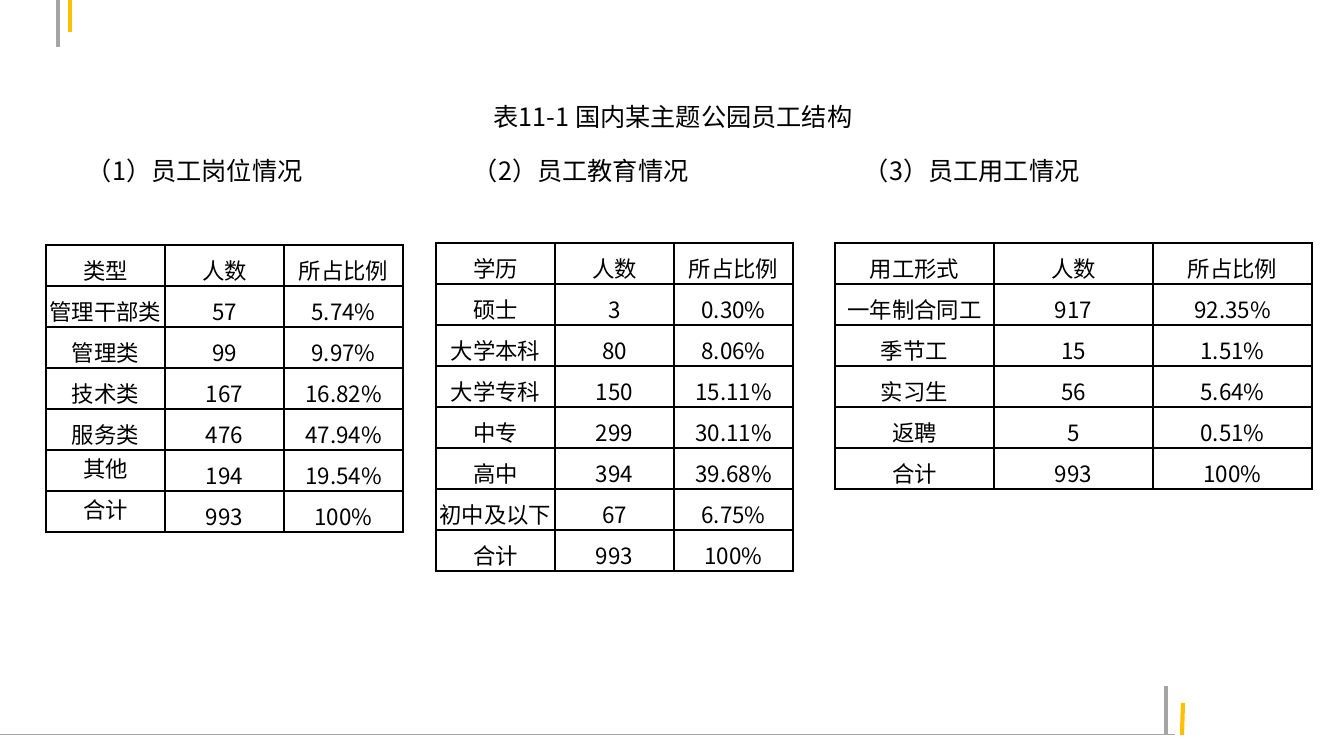
from lxml import etree
from pptx import Presentation
from pptx.dml.color import RGBColor
from pptx.enum.shapes import MSO_CONNECTOR
from pptx.enum.text import MSO_ANCHOR, PP_ALIGN
from pptx.oxml.ns import qn
from pptx.util import Pt

STRAIGHT = MSO_CONNECTOR.STRAIGHT
TOP, MIDDLE, BOTTOM = MSO_ANCHOR.TOP, MSO_ANCHOR.MIDDLE, MSO_ANCHOR.BOTTOM
LEFT, CENTER = PP_ALIGN.LEFT, PP_ALIGN.CENTER
GRAY, GOLD, BLACK = "A5A5A5", "FFC000", "000000"


def px(n):
    return round(n * 914400 / 100.8)


def color(value):
    return RGBColor.from_string(value)


class Deck:
    """Draws styled elements on the current slide, with lengths in px."""

    font = "Noto Sans CJK SC"

    def __init__(self, width, height):
        self.prs = Presentation()
        self.prs.slide_width, self.prs.slide_height = px(width), px(height)
        self.s = self.prs.slides.add_slide(self.prs.slide_layouts[6])

    def line(self, x1, y1, x2, y2, stroke, weight):
        cx = self.s.shapes.add_connector(STRAIGHT, px(x1), px(y1), px(x2), px(y2))
        cx.line.color.rgb = color(stroke)
        cx.line.width = Pt(weight)
        etree.SubElement(cx._element.spPr, qn("a:effectLst"))

    def paragraph(self, p, text, size, align=CENTER):
        p.text = text
        p.alignment = align
        p.font.size = Pt(size)
        p.font.name = self.font
        p.font.color.rgb = color(BLACK)
        rpr = p._p.get_or_add_pPr().find(qn("a:defRPr"))
        etree.SubElement(rpr, qn("a:ea"), typeface=self.font)

    def tabs(self, p, stops):
        tab_list = etree.Element(qn("a:tabLst"))
        for stop in stops:
            etree.SubElement(tab_list, qn("a:tab"), pos=str(px(stop)), algn="l")
        p._p.get_or_add_pPr().find(qn("a:defRPr")).addprevious(tab_list)

    def headings(self, x, y, w, h, title, captions, stops):
        tf = self.s.shapes.add_textbox(px(x), px(y), px(w), px(h)).text_frame
        tf.word_wrap = True
        tf.vertical_anchor = TOP
        self.paragraph(tf.paragraphs[0], title, 18)
        p = tf.add_paragraph()
        self.paragraph(p, "".join("\t" + caption for caption in captions), 18, LEFT)
        p.space_before = Pt(17.5)
        self.tabs(p, stops)

    def borders(self, cell):
        tc_pr = cell._tc.get_or_add_tcPr()
        for side in ("lnL", "lnR", "lnT", "lnB"):
            ln = etree.SubElement(tc_pr, qn("a:" + side), w=str(Pt(1)))
            fill = etree.SubElement(ln, qn("a:solidFill"))
            etree.SubElement(fill, qn("a:srgbClr"), val=BLACK)

    def table(self, x, y, col_w, row_h, rows, inset=0, fixed_cols=(), middle=()):
        n_rows, n_cols = len(rows), len(rows[0])
        tbl = self.s.shapes.add_table(
            n_rows, n_cols, px(x), px(y), px(col_w * n_cols), px(row_h * n_rows)
        ).table
        tbl.first_row = tbl.horz_banding = False
        for column in tbl.columns:
            column.width = px(col_w)
        for i, values in enumerate(rows):
            tbl.rows[i].height = px(row_h)
            for j, value in enumerate(values):
                cell = tbl.cell(i, j)
                cell.margin_left = cell.margin_right = cell.margin_top = px(inset)
                cell.margin_bottom = 0
                cell.vertical_anchor = MIDDLE if (i, j) in middle else BOTTOM
                self.borders(cell)
                cell.fill.background()
                p = cell.text_frame.paragraphs[0]
                self.paragraph(p, value, 16)
                if j in fixed_cols:
                    p.line_spacing = Pt(18)


POSITIONS = [
    ("类型", "人数", "所占比例"),
    ("管理干部类", "57", "5.74%"),
    ("管理类", "99", "9.97%"),
    ("技术类", "167", "16.82%"),
    ("服务类", "476", "47.94%"),
    ("其他", "194", "19.54%"),
    ("合计", "993", "100%"),
]
EMPLOYMENT = [
    ("用工形式", "人数", "所占比例"),
    ("一年制合同工", "917", "92.35%"),
    ("季节工", "15", "1.51%"),
    ("实习生", "56", "5.64%"),
    ("返聘", "5", "0.51%"),
    ("合计", "993", "100%"),
]
EDUCATION = [
    ("学历", "人数", "所占比例"),
    ("硕士", "3", "0.30%"),
    ("大学本科", "80", "8.06%"),
    ("大学专科", "150", "15.11%"),
    ("中专", "299", "30.11%"),
    ("高中", "394", "39.68%"),
    ("初中及以下", "67", "6.75%"),
    ("合计", "993", "100%"),
]


def main():
    deck = Deck(1344, 756)
    deck.line(58, 47, 58, 0, GRAY, 3)
    deck.line(70, 32, 70, 0, GOLD, 3)
    deck.line(0, 735, 1175, 735, GRAY, 0.75)
    deck.line(1166, 735, 1166, 686, GRAY, 3)
    deck.line(1182, 735, 1183, 703, GOLD, 3)
    deck.headings(
        37, 96, 1272, 132, "表11-1 国内某主题公园员工结构",
        ["（1）员工岗位情况", "（2）员工教育情况", "（3）员工用工情况"],
        [40, 426, 817],
    )
    deck.table(46, 245, 119, 41, POSITIONS, inset=1,
               fixed_cols=(0, 1, 2), middle=((5, 0), (6, 0)))
    deck.table(835, 243, 159, 41, EMPLOYMENT)
    deck.table(436, 243, 119, 41, EDUCATION, fixed_cols=(1,))
    deck.prs.save("out.pptx")


if __name__ == "__main__":
    main()
